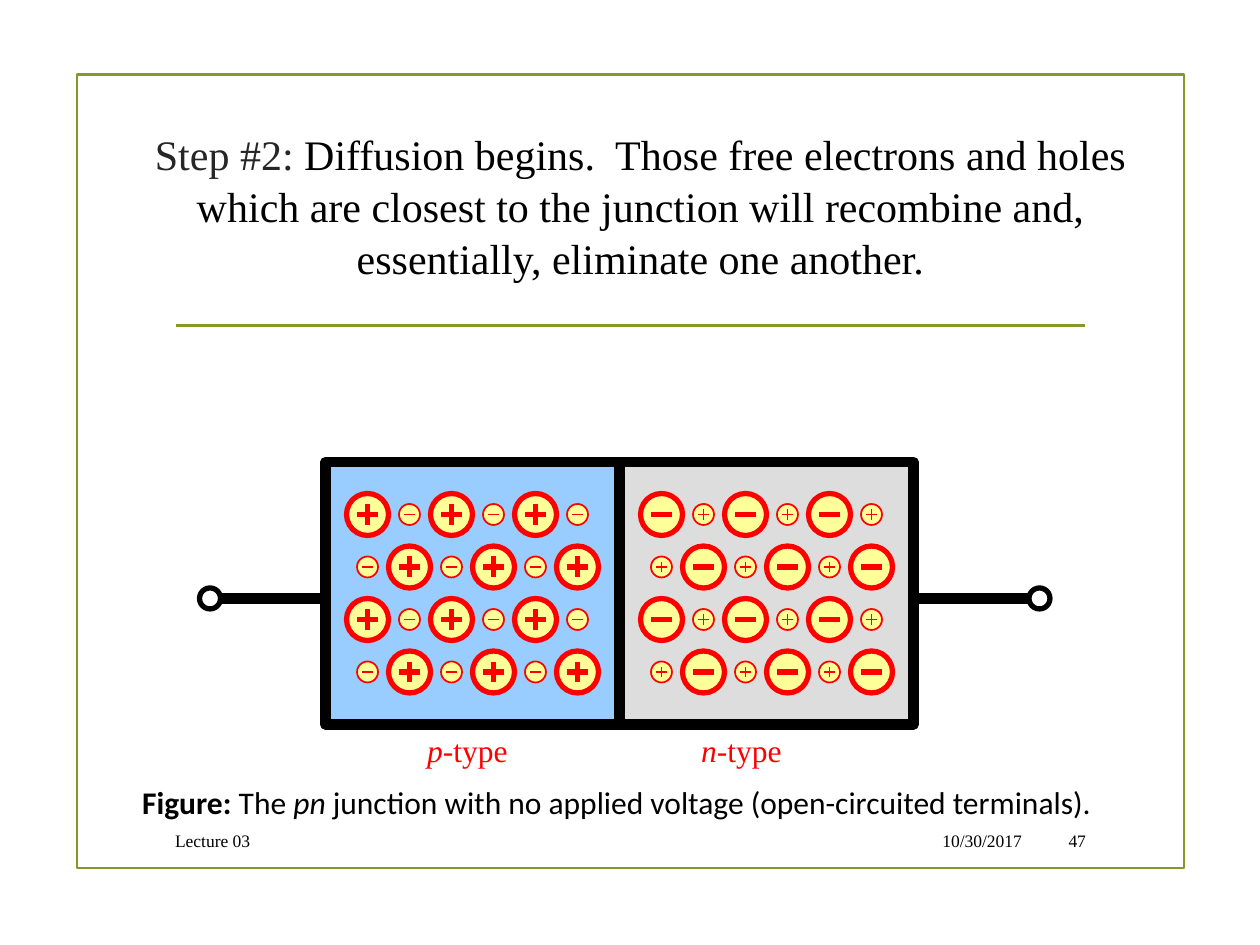
from dataclasses import dataclass
from lxml import etree
from pptx import Presentation
from pptx.dml.color import RGBColor
from pptx.enum import shapes, text
from pptx.oxml import ns
from pptx.util import Emu, Pt

PX = 7620  # 120 px to the inch


@dataclass
class Theme:
    green: str = "83992A"
    black: str = "000000"
    gray: str = "262626"
    white: str = "FFFFFF"
    red: str = "FF0000"
    yellow: str = "FFFF99"
    blue: str = "99CCFF"
    silver: str = "DDDDDD"
    serif: str = "Times New Roman"
    sans: str = "Calibri"
    title: int = 24
    label: int = 18
    foot: int = 10


look = Theme()
deck = Presentation()
deck.slide_width, deck.slide_height = Emu(1200 * PX), Emu(900 * PX)
slide = deck.slides.add_slide(deck.slide_layouts[6])
board = slide.shapes
RECT, OVAL = shapes.MSO_SHAPE.RECTANGLE, shapes.MSO_SHAPE.OVAL
LEFT, MID, RIGHT = text.PP_ALIGN.LEFT, text.PP_ALIGN.CENTER, text.PP_ALIGN.RIGHT
TOP, HALF = text.MSO_ANCHOR.TOP, text.MSO_ANCHOR.MIDDLE


def draw(home, form, box, color, width, fill=None):
    """Draw a shape in box, or a line between two points if form is None."""
    place = [Emu(n * PX) for n in box]
    if form is None:
        item = home.add_connector(shapes.MSO_CONNECTOR.STRAIGHT, *place)
        etree.SubElement(item._element.spPr, ns.qn("a:effectLst"))
    else:
        item = home.add_shape(form, *place)
        item.shadow.inherit = False
        if fill:
            item.fill.solid()
            item.fill.fore_color.rgb = RGBColor.from_string(fill)
        else:
            item.fill.background()
    item.line.color.rgb = RGBColor.from_string(color)
    item.line.width = Pt(width)


def write(box, parts, size, font, align, anchor, wrap=True):
    """Add a text box; each part is (words, color, bold, italic)."""
    item = board.add_textbox(*[Emu(n * PX) for n in box])
    frame = item.text_frame
    frame.word_wrap = wrap
    frame.vertical_anchor = anchor
    line = frame.paragraphs[0]
    line.alignment = align
    for words, color, bold, slant in parts:
        run = line.add_run()
        run.text = words
        run.font.name, run.font.size = font, Pt(size)
        run.font.bold, run.font.italic = bold, slant
        run.font.color.rgb = RGBColor.from_string(color)
    return item


# Frame and rule
draw(board, RECT, (73, 71, 1055, 756), look.green, 1.25)
draw(board, None, (168, 310, 1033, 310), look.green, 1.25)

# Caption
note = write((90, 740, 995, 50),
             [("Figure:", look.black, True, False),
              (" The ", look.black, False, False),
              ("pn", look.black, False, True),
              (" junction with no applied voltage (open-circuited terminals).",
               look.black, False, False)],
             look.label, look.sans, MID, TOP)
note.fill.solid()
note.fill.fore_color.rgb = RGBColor.from_string(look.white)

# Wire and open terminals
draw(board, None, (200, 570, 990, 570), look.black, 6)
for x in (190, 980):
    draw(board, OVAL, (x, 560, 20, 20), look.black, 3, look.white)

# The two regions, each a grid of large ions and small carriers
for left, fill, ion_plus in ((310, look.blue, True), (590, look.silver, False)):
    draw(board, RECT, (left, 440, 280, 250), look.black, 6, fill)
    for row in range(4):
        for col in range(6):
            x, y = left + 40 + col * 40, 490 + row * 50
            ion = (row + col) % 2 == 0
            r, arm, width = (20, 10, 3) if ion else (10, 5, 1)
            home = board.add_group_shape().shapes
            draw(home, OVAL, (x - r, y - r, 2 * r, 2 * r),
                 look.red, width, look.yellow)
            draw(home, None, (x - arm, y, x + arm, y), look.red, width)
            if ion == ion_plus:
                draw(home, None, (x, y - arm, x, y + arm), look.red, width)

# Region labels
for x, wide, sort in ((395, 104, "p"), (656, 108, "n")):
    write((x, 690, wide, 48),
          [(sort, look.red, False, True), ("-type", look.red, False, False)],
          look.label, look.serif, LEFT, TOP, False)

# Title
head = write((85, 110, 1050, 170),
             [("Step #2: ", look.gray, False, False),
              ("Diffusion begins.  Those free electrons and holes which are "
               "closest to the junction will recombine and, essentially, "
               "eliminate one another.", look.black, False, False)],
             look.title, look.serif, MID, HALF)
head.text_frame.paragraphs[0].line_spacing = 1.04

# Footer
for x, wide, words, align in ((155, 670, "Lecture 03", LEFT),
                              (834, 151, "10/30/2017", RIGHT),
                              (995, 51, "47", RIGHT)):
    write((x, 782, wide, 37), [(words, look.black, False, False)],
          look.foot, look.serif, align, HALF)

deck.save("out.pptx")
